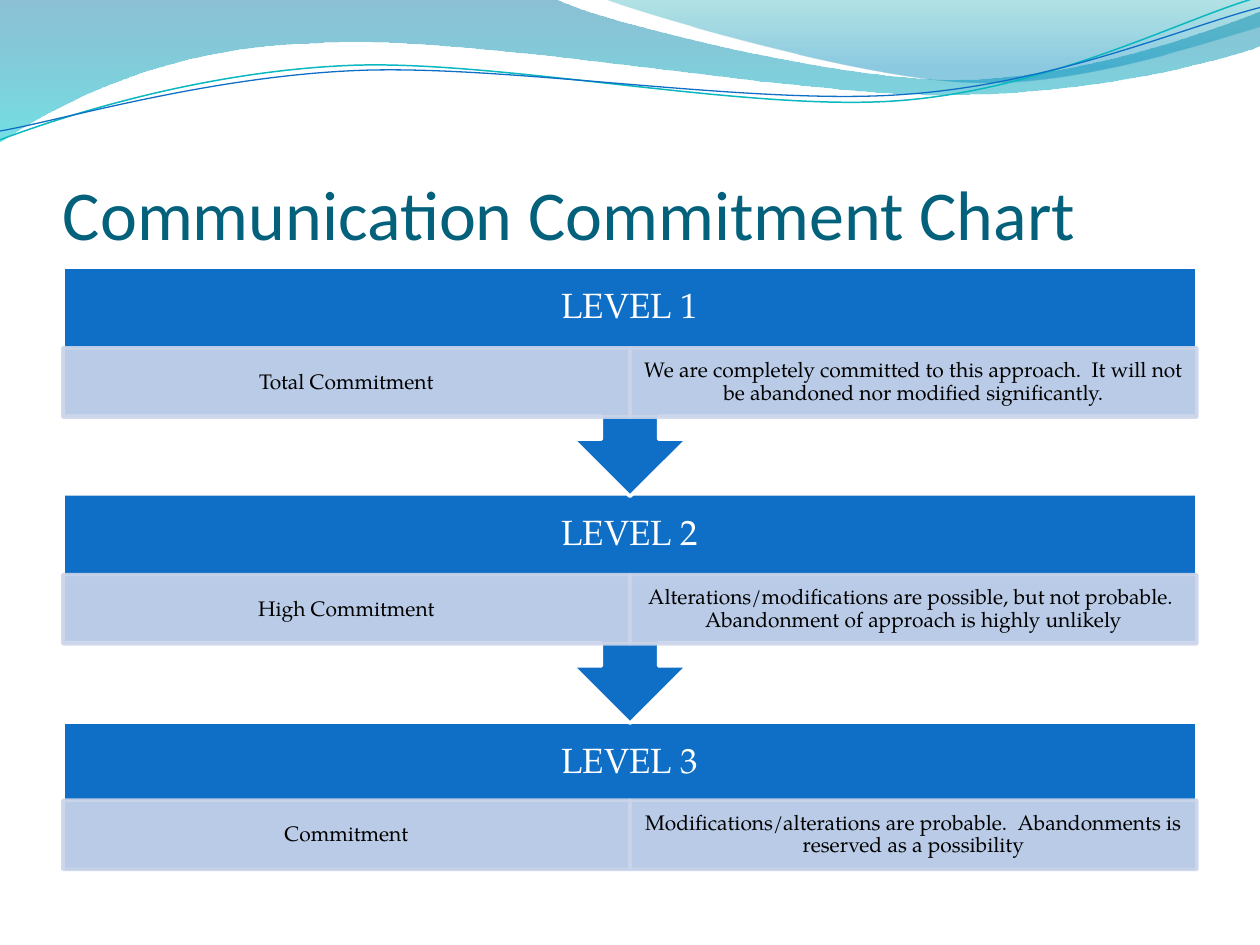
from pptx import Presentation
from pptx.dml.color import RGBColor
from pptx.enum.shapes import MSO_SHAPE
from pptx.enum.text import MSO_ANCHOR, PP_ALIGN
from pptx.oxml.ns import qn
from pptx.util import Inches, Pt
from lxml import etree

WHITE = RGBColor(0xFF, 0xFF, 0xFF)
BLACK = RGBColor(0x00, 0x00, 0x00)
BLUE = RGBColor(0x0F, 0x6F, 0xC6)
PALE_BLUE = RGBColor(0xCC, 0xD5, 0xEA)
TITLE_TEAL = RGBColor(0x04, 0x61, 0x7B)
LINE_TEAL = RGBColor(0x0A, 0xB8, 0xBF)
DEEP_BLUE = RGBColor(0x00, 0x74, 0xA1)
AQUA = RGBColor(0x00, 0xC6, 0xCF)
SEA_GREEN = RGBColor(0x00, 0xA1, 0xA9)
SKY_BLUE = RGBColor(0x00, 0x8B, 0xBF)
RECTANGLE = MSO_SHAPE.RECTANGLE
CALLOUT = MSO_SHAPE.UP_ARROW_CALLOUT
MIDDLE, BOTTOM = MSO_ANCHOR.MIDDLE, MSO_ANCHOR.BOTTOM
LEFT, CENTER = PP_ALIGN.LEFT, PP_ALIGN.CENTER


def write_text(shape, text, size, color, font="TeX Gyre Pagella", align=CENTER,
               anchor=MIDDLE, margins=(0.09, 0.02, 0.09, 0.02), spacing=0.9):
    frame = shape.text_frame
    frame.word_wrap = True
    frame.vertical_anchor = anchor
    (frame.margin_left, frame.margin_top,
     frame.margin_right, frame.margin_bottom) = map(Inches, margins)
    paragraph = frame.paragraphs[0]
    paragraph.alignment = align
    paragraph.line_spacing = spacing
    run = paragraph.add_run()
    run.text = text
    run.font.name = font
    run.font.size = Pt(size)
    run.font.color.rgb = color


def set_opacity(shape, percents):
    colors = shape._element.spPr.iter(qn("a:srgbClr"))
    for color, percent in zip(colors, percents):
        etree.SubElement(color, qn("a:alpha")).set("val", str(percent * 1000))


presentation = Presentation()
presentation.slide_width = Inches(10)
presentation.slide_height = Inches(7.5)
slide = presentation.slides.add_slide(presentation.slide_layouts[6])
shapes = slide.shapes

waves = [
    ([(0, 0), (4.4, -0.01), (4.76, 0.17, 6.64, 0.63, 7.58, 0.63),
      (8.53, 0.63, 9.58, 0.26, 10, 0.09), (10.01, 0.36),
      (9.83, 0.44, 8.7, 0.76, 7.46, 0.75), (6.22, 0.75, 3.82, 0.28, 2.57, 0.34),
      (1.29, 0.36, 0.46, 0.83, -0.01, 1.13)],
     [(0, DEEP_BLUE, 45), (1, AQUA, 55)], None),
    ([(4.79, -0.01), (5.09, 0.11, 6.82, 0.62, 7.69, 0.65),
      (8.56, 0.69, 9.61, 0.32, 10, 0.21), (10, 0)],
     [(0, SEA_GREEN, 30), (0.8, SKY_BLUE, 45)], None),
    ([(0, 1.11), (0.48, 0.93, 1.58, 0.57, 2.77, 0.52),
      (3.95, 0.47, 5.93, 0.89, 7.13, 0.8), (8.33, 0.71, 9.38, 0.15, 9.98, -0.02)],
     None, (LINE_TEAL, 0.85)),
    ([(0, 1.04), (0.47, 0.96, 1.64, 0.61, 2.83, 0.56),
      (4.03, 0.51, 5.97, 0.84, 7.17, 0.75), (8.36, 0.67, 9.41, 0.21, 10, 0.06)],
     None, (BLUE, 0.75)),
]
for segments, gradient, stroke in waves:
    anchors = [(Inches(segment[-2]), Inches(segment[-1])) for segment in segments]
    builder = shapes.build_freeform(*anchors[0], scale=1.0)
    builder.add_line_segments(anchors[1:], close=gradient is not None)
    wave = builder.convert_to_shape()
    sides = list(wave._element.spPr.iter(qn("a:lnTo")))
    for side, segment in zip(sides, segments[1:]):
        if len(segment) == 6:
            curve = etree.Element(qn("a:cubicBezTo"))
            for x, y in zip(segment[::2], segment[1::2]):
                point = etree.SubElement(curve, qn("a:pt"))
                point.set("x", str(Inches(x) - wave.left))
                point.set("y", str(Inches(y) - wave.top))
            side.getparent().replace(side, curve)
    wave.shadow.inherit = False
    if gradient:
        wave.fill.gradient()
        wave.fill.gradient_angle = 270
        for stop, (position, color, _) in zip(wave.fill.gradient_stops, gradient):
            stop.position = position
            stop.color.rgb = color
        set_opacity(wave, [opacity for _, _, opacity in gradient])
        wave.line.fill.background()
    else:
        wave.fill.background()
        wave.line.color.rgb = stroke[0]
        wave.line.width = Pt(stroke[1])

title = shapes.add_textbox(Inches(0.5), Inches(0.77), Inches(9), Inches(1.25))
write_text(title, "Communication Commitment Chart", size=40, color=TITLE_TEAL,
           font="Calibri", align=LEFT, anchor=BOTTOM, margins=(0, 0.05, 0, 0), spacing=1)

levels = [
    ("LEVEL 3", 5.73, 1.19, 0.62, RECTANGLE, "Commitment",
     "Modifications/alterations are probable.  Abandonments is reserved as a possibility"),
    ("LEVEL 2", 3.92, 1.82, 0.64, CALLOUT, "High Commitment",
     "Alterations/modifications are possible, but not probable.  "
     "Abandonment of approach is highly unlikely"),
    ("LEVEL 1", 2.12, 1.82, 0.64, CALLOUT, "Total Commitment",
     "We are completely committed to this approach.  "
     "It will not be abandoned nor modified significantly."),
]
for name, top, height, cell_offset, outline, commitment, meaning in levels:
    block = shapes.add_shape(outline, Inches(0.5), Inches(top), Inches(9), Inches(height))
    block.shadow.inherit = False
    block.fill.solid()
    block.fill.fore_color.rgb = BLUE
    block.line.color.rgb = WHITE
    block.line.width = Pt(2)
    if outline == CALLOUT:
        block.rotation = 180

    heading = shapes.add_textbox(Inches(0.5), Inches(top), Inches(9), Inches(0.64))
    write_text(heading, name, size=20, color=WHITE, margins=(0.16,) * 4)

    for column, text in enumerate((commitment, meaning)):
        cell = shapes.add_shape(RECTANGLE, Inches(0.5 + 4.5 * column),
                                Inches(top + cell_offset), Inches(4.5), Inches(0.55))
        cell.shadow.inherit = False
        cell.fill.solid()
        cell.fill.fore_color.rgb = PALE_BLUE
        cell.line.color.rgb = PALE_BLUE
        cell.line.width = Pt(2)
        set_opacity(cell, (90, 90))
        write_text(cell, text, size=12, color=BLACK)

presentation.save("out.pptx")
